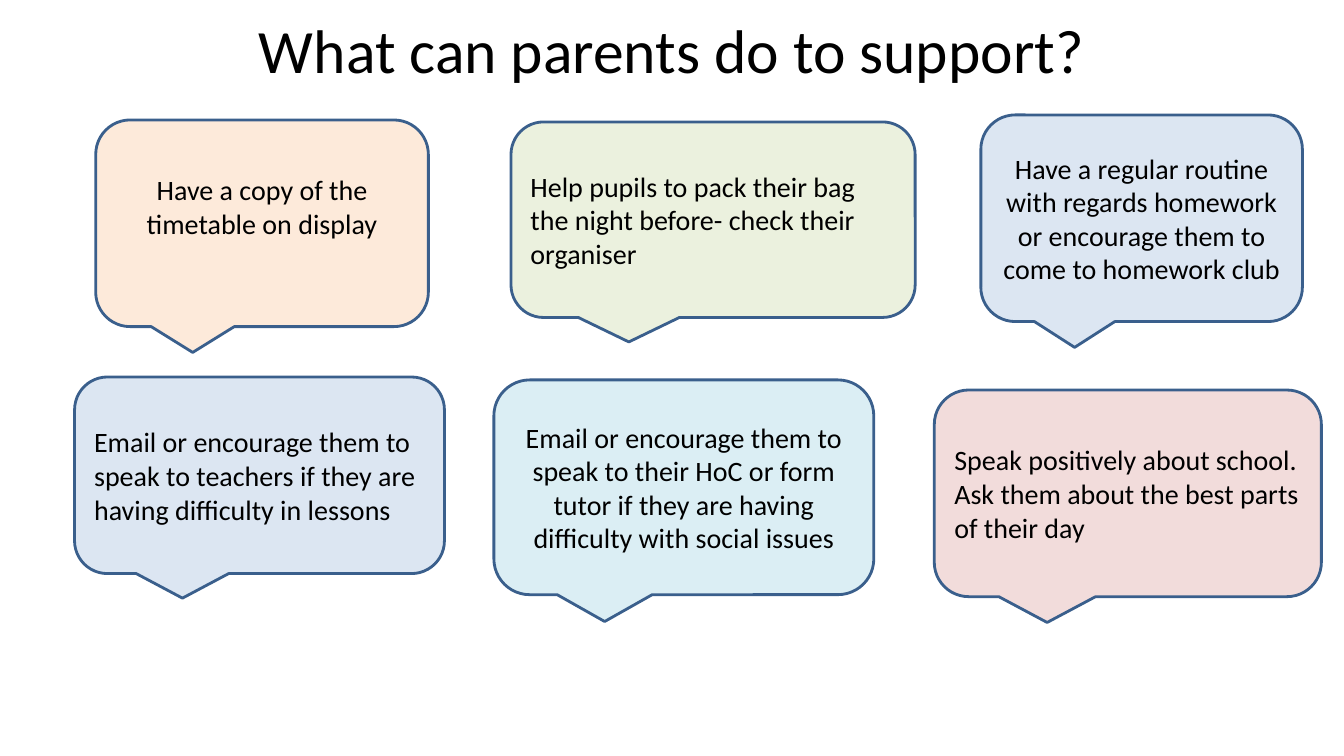
"""Build a slide of six speech bubbles with ways parents can support pupils."""
from pptx import Presentation
from pptx.dml.color import RGBColor
from pptx.enum.shapes import MSO_SHAPE
from pptx.enum.text import MSO_ANCHOR, PP_ALIGN
from pptx.util import Pt

BUBBLE = MSO_SHAPE.ROUNDED_RECTANGULAR_CALLOUT
MIDDLE = MSO_ANCHOR.MIDDLE
LEFT, CENTER = PP_ALIGN.LEFT, PP_ALIGN.CENTER
FONT = "Calibri"
INSET = 3.6
EMPTY_LINE = 24
COLORS = {
    "text": "000000",
    "outline": "3A5F8C",
    "peach": "FDEADA",
    "green": "EBF1DE",
    "blue": "DCE6F2",
    "aqua": "DBEEF4",
    "rose": "F2DCDB",
}
BUBBLES = [
    (68.4, 85.7, 237.6, 147.6, "peach", CENTER, EMPTY_LINE,
     "Have a copy of the timetable on display"),
    (365, 87.1, 288.7, 139.7, "green", LEFT, 0,
     "Help pupils to pack their bag the night before- check their organiser"),
    (700.6, 82.1, 229.7, 147.6, "blue", CENTER, 0,
     "Have a regular routine with regards homework or encourage them to "
     "come to homework club"),
    (53.3, 269.3, 264.2, 140.4, "blue", LEFT, 0,
     "Email or encourage them to speak to teachers if they are having "
     "difficulty in lessons"),
    (352.8, 271.4, 271.4, 153.4, "aqua", CENTER, 0,
     "Email or encourage them to speak to their HoC or form tutor if they "
     "are having difficulty with social issues"),
    (667.4, 278.6, 276.5, 147.6, "rose", LEFT, 0,
     "Speak positively about school. Ask them about the best parts of their day"),
]


def color(name):
    """Return the named colour."""
    return RGBColor.from_string(COLORS[name])


def write(box, text, size, align):
    """Fill a box with one vertically centred paragraph."""
    frame = box.text_frame
    frame.word_wrap = True
    frame.vertical_anchor = MIDDLE
    frame.text = text
    paragraph = frame.paragraphs[0]
    paragraph.alignment = align
    for span in paragraph.runs:
        span.font.name = FONT
        span.font.size = Pt(size)
        span.font.color.rgb = color("text")


def add_title(page, text):
    """Add the slide heading."""
    box = page.shapes.add_textbox(Pt(48), Pt(-10), Pt(864), Pt(90))
    write(box, text, 44, CENTER)


def add_bubble(page, left, top, width, height, fill, align, space_below, text):
    """Add a speech bubble, with optional space below its text."""
    bubble = page.shapes.add_shape(BUBBLE, Pt(left), Pt(top), Pt(width), Pt(height))
    bubble.shadow.inherit = False
    bubble.fill.solid()
    bubble.fill.fore_color.rgb = color(fill)
    bubble.line.color.rgb = color("outline")
    bubble.line.width = Pt(2)
    write(bubble, text, 20, align)
    bubble.text_frame.margin_bottom = Pt(INSET + space_below)


def main():
    """Create and save the deck."""
    deck = Presentation()
    deck.slide_width, deck.slide_height = Pt(960), Pt(540)
    page = deck.slides.add_slide(deck.slide_layouts[6])
    add_title(page, "What can parents do to support?")
    for bubble in BUBBLES:
        add_bubble(page, *bubble)
    deck.save("out.pptx")


if __name__ == "__main__":
    main()
